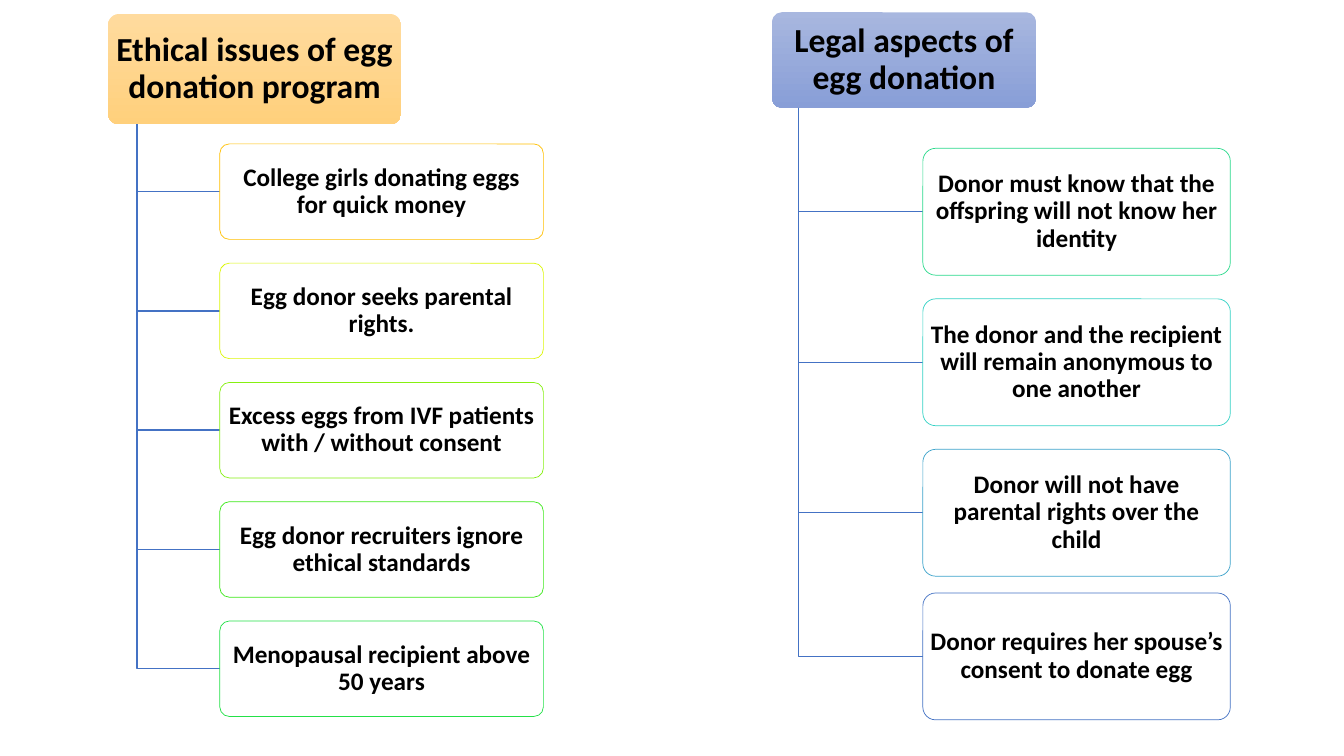
from dataclasses import dataclass

import pptx
import pptx.dml.color
import pptx.enum.shapes
import pptx.enum.text
import pptx.oxml
import pptx.oxml.ns
import pptx.util
from lxml import etree
from pptx.shapes.autoshape import Shape
from pptx.shapes.shapetree import SlideShapes

Pt = pptx.util.Pt
COLORS = {
    "text": "000000",
    "box": "FFFFFF",
    "elbow": "4472C4",
    "ethics top": "FFDB9E",
    "ethics bottom": "FFD07C",
    "legal top": "A8B7DF",
    "legal bottom": "889ED7",
    "amber": "FFC000",
    "yellow": "DCF709",
    "lime": "86F011",
    "leaf": "3CE81A",
    "green": "23E148",
    "mint": "2BDA8C",
    "turquoise": "33D2C5",
    "sky": "3CA3CB",
    "blue": "4472C4",
}


@dataclass(frozen=True)
class Area:
    left: float
    top: float
    width: float
    height: float


@dataclass(frozen=True)
class Item:
    text: str
    outline: str
    top: float


@dataclass(frozen=True)
class Branch:
    title: str
    shade: str
    header: Area
    trunk: float
    item_left: float
    item_width: float
    item_height: float
    items: tuple[Item, ...]


ETHICS_TOP, ETHICS_STEP = 102.8, 85.2
LEGAL_TOP, LEGAL_STEP = 106, 107.5

ETHICS_ITEMS = (
    ("College girls donating eggs for quick money", "amber"),
    ("Egg donor seeks parental rights.", "yellow"),
    ("Excess eggs from IVF patients with / without consent", "lime"),
    ("Egg donor recruiters ignore ethical standards", "leaf"),
    ("Menopausal recipient above 50 years", "green"),
)
LEGAL_ITEMS = (
    ("Donor must know that the offspring will not know her identity", "mint"),
    ("The donor and the recipient will remain anonymous to one another", "turquoise"),
    ("Donor will not have parental rights over the child", "sky"),
)
LAST_LEGAL_ITEM = Item("Donor requires her spouse’s consent to donate egg", "blue", 423.6)


def stack(entries: tuple[tuple[str, str], ...], top: float, step: float) -> tuple[Item, ...]:
    """Space the entries evenly downwards from top."""
    return tuple(
        Item(text, outline, top + row * step)
        for row, (text, outline) in enumerate(entries)
    )


BRANCHES = (
    Branch(
        "Ethical issues of egg donation program", "ethics",
        Area(77.1, 10, 209.4, 78.8), 98, 157, 231.1, 68.2,
        stack(ETHICS_ITEMS, ETHICS_TOP, ETHICS_STEP),
    ),
    Branch(
        "Legal aspects of egg donation", "legal",
        Area(551.5, 8.8, 188.5, 68.2), 570.4, 659.2, 219.6, 90.6,
        stack(LEGAL_ITEMS, LEGAL_TOP, LEGAL_STEP) + (LAST_LEGAL_ITEM,),
    ),
)


def color(name: str) -> pptx.dml.color.RGBColor:
    return pptx.dml.color.RGBColor.from_string(COLORS[name])


def add_box(shapes: SlideShapes, area: Area, text: str, size: float, inset: float) -> Shape:
    box = shapes.add_shape(
        pptx.enum.shapes.MSO_SHAPE.ROUNDED_RECTANGLE,
        Pt(area.left), Pt(area.top), Pt(area.width), Pt(area.height),
    )
    box.shadow.inherit = False
    box.adjustments[0] = 0.1
    frame = box.text_frame
    frame.word_wrap = True
    frame.vertical_anchor = pptx.enum.text.MSO_ANCHOR.MIDDLE
    frame.margin_left = frame.margin_right = Pt(inset)
    frame.margin_top = frame.margin_bottom = Pt(2)
    para = frame.paragraphs[0]
    para.alignment = pptx.enum.text.PP_ALIGN.CENTER
    para.line_spacing = 0.9
    span = para.add_run()
    span.text = text
    span.font.name = "Calibri"
    span.font.size = Pt(size)
    span.font.bold = True
    span.font.color.rgb = color("text")
    return box


def add_header(shapes: SlideShapes, branch: Branch) -> None:
    box = add_box(shapes, branch.header, branch.title, 24, 3)
    box.line.fill.background()
    box.fill.gradient()
    box.fill.gradient_angle = 270
    for stop, end in zip(box.fill.gradient_stops, ("top", "bottom")):
        stop.color.rgb = color(f"{branch.shade} {end}")


def add_item(shapes: SlideShapes, branch: Branch, item: Item) -> None:
    area = Area(branch.item_left, item.top, branch.item_width, branch.item_height)
    box = add_box(shapes, area, item.text, 18, 2)
    box.fill.solid()
    box.fill.fore_color.rgb = color("box")
    tint = box.fill._xPr.find(".//" + pptx.oxml.ns.qn("a:srgbClr"))
    etree.SubElement(tint, pptx.oxml.ns.qn("a:alpha"), val="90000")
    box.line.color.rgb = color(item.outline)
    box.line.width = Pt(0.5)


def add_elbow(shapes: SlideShapes, branch: Branch, item: Item) -> None:
    """Run a line down from the header and across to the item."""
    start = branch.header.top + branch.header.height
    middle = item.top + branch.item_height / 2
    builder = shapes.build_freeform(Pt(branch.trunk), Pt(start))
    builder.add_line_segments(
        [(Pt(branch.trunk), Pt(middle)), (Pt(branch.item_left), Pt(middle))],
        close=False,
    )
    elbow = builder.convert_to_shape()
    elbow.shadow.inherit = False
    elbow.fill.background()
    elbow.line.color.rgb = color("elbow")
    elbow.line.width = Pt(1)


def main() -> None:
    deck = pptx.Presentation()
    deck.slide_width, deck.slide_height = Pt(960), Pt(540)
    page = deck.slides.add_slide(deck.slide_layouts[6])
    for branch in BRANCHES:
        add_header(page.shapes, branch)
        for item in branch.items:
            add_elbow(page.shapes, branch, item)
            add_item(page.shapes, branch, item)
    deck.save("out.pptx")


if __name__ == "__main__":
    main()
